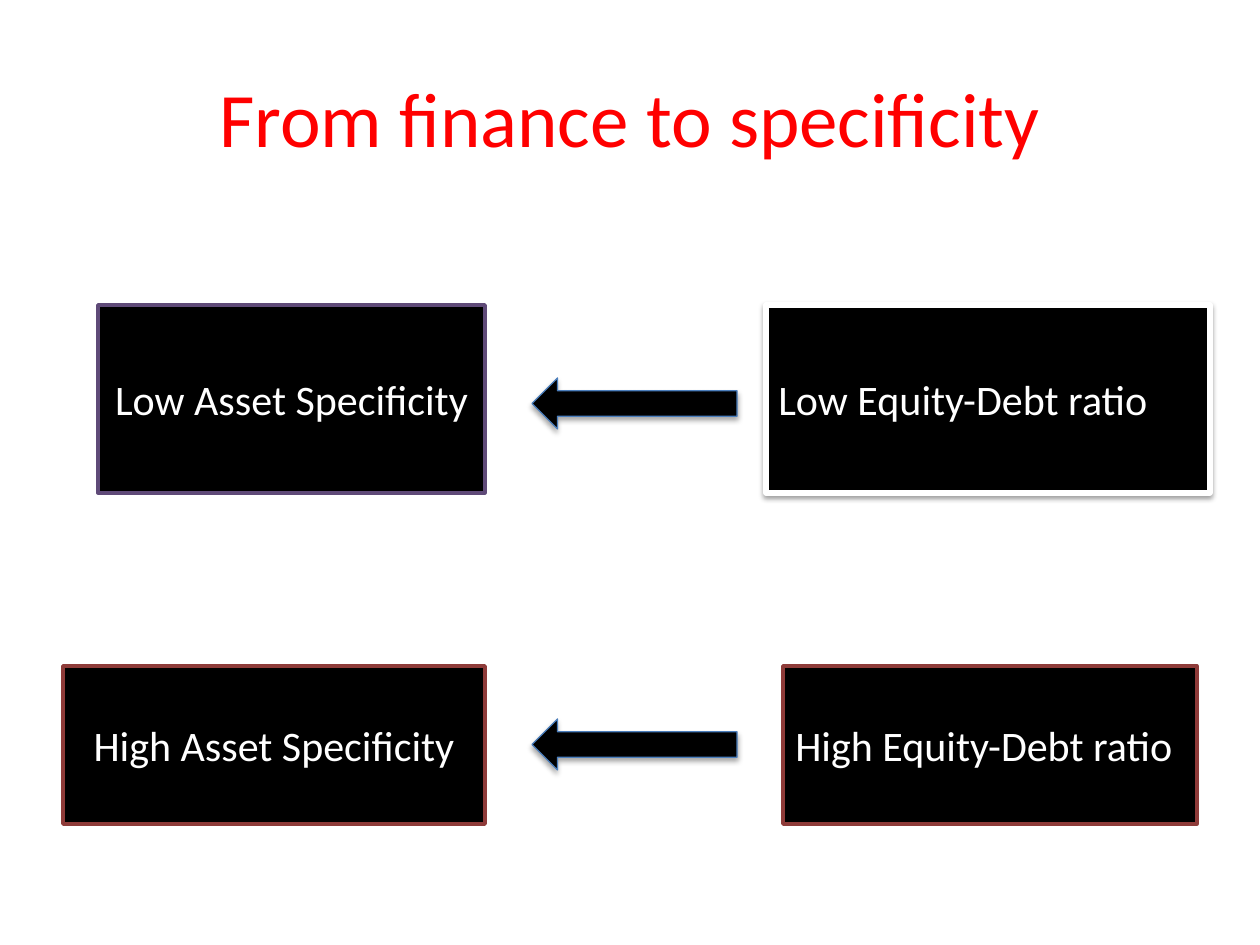
from dataclasses import dataclass
from typing import Optional

from lxml import etree
from pptx import Presentation
from pptx.dml.color import RGBColor
from pptx.enum.shapes import MSO_SHAPE
from pptx.enum.text import MSO_ANCHOR, PP_ALIGN
from pptx.oxml.ns import qn
from pptx.util import Emu, Pt

PX_PER_INCH = 126
EMU_PER_INCH = 914400
FONT = "Calibri"
RECTANGLE, LEFT_ARROW = MSO_SHAPE.RECTANGLE, MSO_SHAPE.LEFT_ARROW
LEFT, CENTER = PP_ALIGN.LEFT, PP_ALIGN.CENTER
MIDDLE = MSO_ANCHOR.MIDDLE
TITLE_ONLY = 5

COLORS = {
    "title": "FF0000",
    "fill": "000000",
    "text": "FFFFFF",
    "shadow": "000000",
    "purple": "5F4A78",
    "white": "FFFFFF",
    "red": "8E3B39",
    "blue": "4B7EBC",
}


@dataclass(frozen=True)
class Shadow:
    opacity: int  # percent
    blur: float  # points
    distance: float  # points


@dataclass(frozen=True)
class Block:
    left: int
    top: int
    width: int
    height: int
    line: str
    line_width: float
    text: str = ""
    align: PP_ALIGN = CENTER
    kind: MSO_SHAPE = RECTANGLE
    shadow: Optional[Shadow] = None


LOW_TOP, LOW_HEIGHT = 305, 188
HIGH_TOP, HIGH_HEIGHT = 666, 158
BOX_SHADOW = Shadow(38, 3.1, 1.6)
ARROW_SHADOW = Shadow(35, 3.1, 1.8)

BLOCKS = [
    Block(98, LOW_TOP, 387, LOW_HEIGHT, "purple", 2, "Low Asset Specificity"),
    Block(766, LOW_TOP, 444, LOW_HEIGHT, "white", 3, "Low Equity-Debt ratio", LEFT,
          shadow=BOX_SHADOW),
    Block(63, HIGH_TOP, 422, HIGH_HEIGHT, "red", 2, "High Asset Specificity"),
    Block(783, HIGH_TOP, 414, HIGH_HEIGHT, "red", 2, "High Equity-Debt ratio", LEFT),
] + [
    Block(532, top, 205, 51, "blue", 0.75, kind=LEFT_ARROW, shadow=ARROW_SHADOW)
    for top in (378, 719)
]


def px(length: int) -> Emu:
    return Emu(round(length * EMU_PER_INCH / PX_PER_INCH))


def color(name: str) -> RGBColor:
    return RGBColor.from_string(COLORS[name])


def write(shape, text: str, size: int, color_name: str, align: PP_ALIGN) -> None:
    frame = shape.text_frame
    frame.word_wrap = True
    frame.vertical_anchor = MIDDLE
    frame.text = text
    para = frame.paragraphs[0]
    para.alignment = align
    para.font.name = FONT
    para.font.size = Pt(size)
    para.font.color.rgb = color(color_name)


def cast_shadow(shape, shadow: Shadow) -> None:
    """Drop a soft shadow straight down, into the shape's empty effect list."""
    effects = shape._element.spPr.find(qn("a:effectLst"))
    outer = etree.SubElement(
        effects, qn("a:outerShdw"), blurRad=str(Pt(shadow.blur)),
        dist=str(Pt(shadow.distance)), dir=str(90 * 60000), rotWithShape="0")
    tint = etree.SubElement(outer, qn("a:srgbClr"), val=COLORS["shadow"])
    etree.SubElement(tint, qn("a:alpha"), val=str(shadow.opacity * 1000))


def draw_block(slide, block: Block) -> None:
    shape = slide.shapes.add_shape(
        block.kind, px(block.left), px(block.top), px(block.width), px(block.height))
    shape.fill.solid()
    shape.fill.fore_color.rgb = color("fill")
    shape.line.color.rgb = color(block.line)
    shape.line.width = Pt(block.line_width)
    shape.shadow.inherit = False
    if block.shadow:
        cast_shadow(shape, block.shadow)
    if block.text:
        write(shape, block.text, 24, "text", block.align)


def main() -> None:
    deck = Presentation()
    deck.slide_width, deck.slide_height = px(1260), px(945)
    slide = deck.slides.add_slide(deck.slide_layouts[TITLE_ONLY])

    title = slide.shapes.title
    title.left, title.top = px(63), px(38)
    title.width, title.height = px(1134), px(158)
    write(title, "From finance to specificity", 44, "title", CENTER)

    for block in BLOCKS:
        draw_block(slide, block)
    deck.save("out.pptx")


if __name__ == "__main__":
    main()
